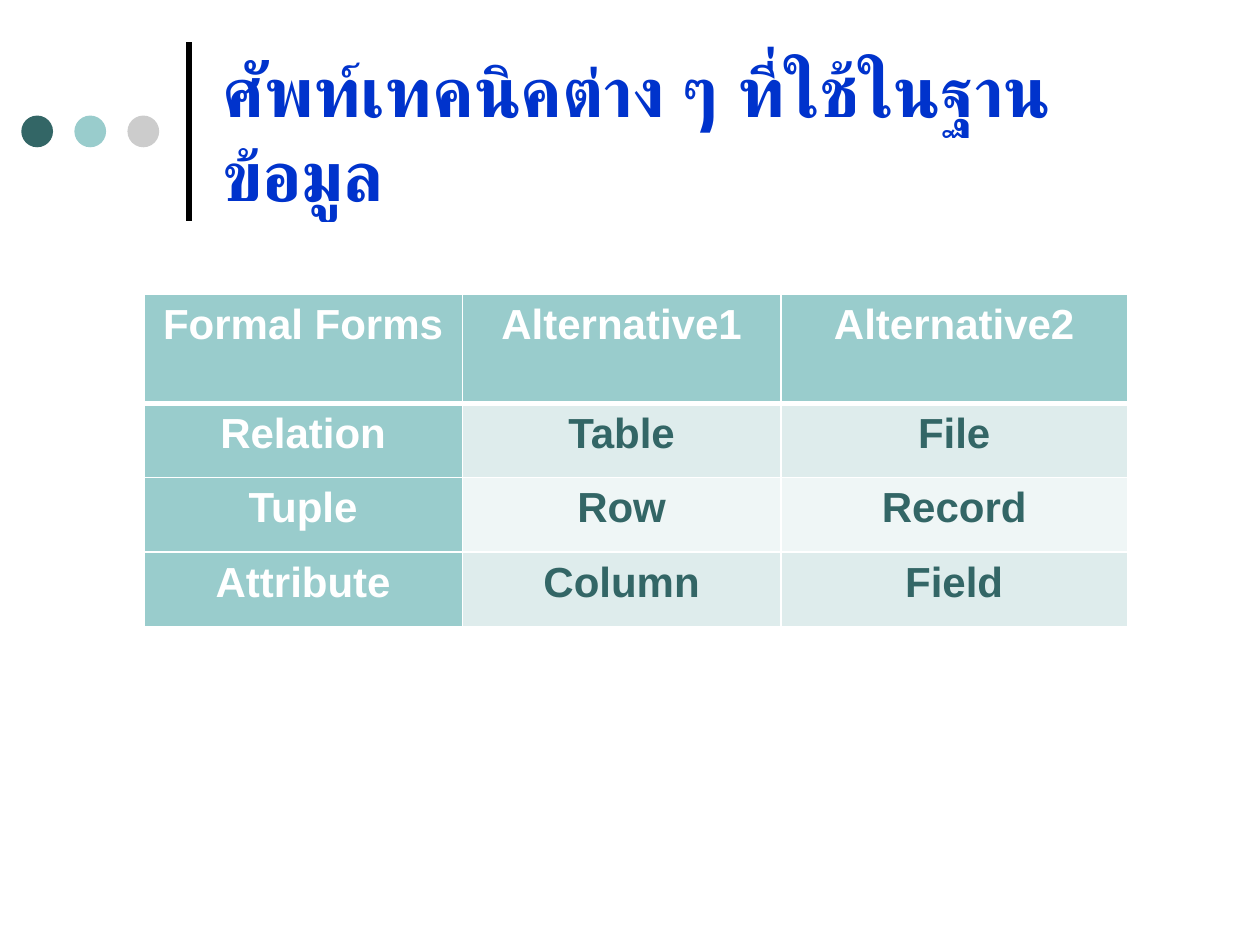
import lxml.etree
import pptx
import pptx.dml.color
import pptx.enum.lang
import pptx.enum.shapes
import pptx.enum.text
import pptx.oxml.ns
import pptx.util

Cm, Pt = pptx.util.Cm, pptx.util.Pt
qualified = pptx.oxml.ns.qn

TITLE = "ศัพท์เทคนิคต่าง ๆ ที่ใช้ในฐานข้อมูล"
TERMS = [
    ("Formal Forms", "Alternative1", "Alternative2"),
    ("Relation", "Table", "File"),
    ("Tuple", "Row", "Record"),
    ("Attribute", "Column", "Field"),
]
COLUMN_WIDTHS = (6.42, 6.42, 6.99)
ROW_HEIGHTS = (2.2, 1.5, 1.5, 1.5)

THEME = {
    "font": "Arial",
    "title_size": 40,
    "table_size": 24,
    "title": "0033CC",
    "rule": "000000",
    "dots": ("336666", "99CCCC", "CCCCCC"),
    "heading_fill": "99CCCC",
    "heading_text": "FFFFFF",
    "body_text": "336666",
    "bands": ("DEECEC", "EFF6F6"),
    "border": "FFFFFF",
}


def color(value):
    return pptx.dml.color.RGBColor.from_string(value)


def set_values(target, values):
    for name, value in values.items():
        setattr(target, name, value)


def paint(fill, value):
    fill.solid()
    fill.fore_color.rgb = color(value)


def write(paragraph, text, size, text_color):
    run = paragraph.add_run()
    run.text = text
    set_values(run.font, {"name": THEME["font"], "size": Pt(size), "bold": True})
    run.font.color.rgb = color(text_color)
    return run


def add_dots(slide):
    diameter, step = 0.64, 1.07
    for index, dot_color in enumerate(THEME["dots"]):
        dot = slide.shapes.add_shape(
            pptx.enum.shapes.MSO_SHAPE.OVAL,
            Cm(0.43 + index * step), Cm(2.33), Cm(diameter), Cm(diameter))
        dot.shadow.inherit = False
        paint(dot.fill, dot_color)
        dot.line.fill.background()


def add_rule(slide):
    rule = slide.shapes.add_connector(
        pptx.enum.shapes.MSO_CONNECTOR.STRAIGHT, Cm(3.81), Cm(4.45), Cm(3.81), Cm(0.84))
    rule.line.width = Pt(3)
    rule.line.color.rgb = color(THEME["rule"])
    properties = rule._element.spPr
    lxml.etree.SubElement(properties, qualified("a:effectLst"))


def add_title(slide):
    box = slide.shapes.add_textbox(Cm(4.24), Cm(0.53), Cm(19.48), Cm(4.24))
    set_values(box.text_frame, {
        "word_wrap": True,
        "vertical_anchor": pptx.enum.text.MSO_ANCHOR.MIDDLE,
    })
    run = write(box.text_frame.paragraphs[0], TITLE, THEME["title_size"], THEME["title"])
    run.font.language_id = pptx.enum.lang.MSO_LANGUAGE_ID.THAI
    # Thai takes its typeface from the complex-script slot.
    lxml.etree.SubElement(run.font._element, qualified("a:cs"), typeface=THEME["font"])


def set_borders(cell, widths):
    """Put left, right, top and bottom lines before the fill, as the schema asks."""
    properties = cell._tc.get_or_add_tcPr()
    for index, (side, width) in enumerate(widths.items()):
        line = lxml.etree.Element(qualified("a:ln" + side), w=str(Pt(width)))
        fill = lxml.etree.SubElement(line, qualified("a:solidFill"))
        lxml.etree.SubElement(fill, qualified("a:srgbClr"), val=THEME["border"])
        properties.insert(index, line)


def add_terms_table(slide):
    table = slide.shapes.add_table(
        len(TERMS), len(COLUMN_WIDTHS), Cm(2.9), Cm(5.93),
        Cm(sum(COLUMN_WIDTHS)), Cm(sum(ROW_HEIGHTS))).table
    table.first_col = True
    for column, width in zip(table.columns, COLUMN_WIDTHS):
        column.width = Cm(width)
    for row, height in zip(table.rows, ROW_HEIGHTS):
        row.height = Cm(height)

    for row_index, words in enumerate(TERMS):
        for column_index, word in enumerate(words):
            cell = table.cell(row_index, column_index)
            heading = row_index == 0 or column_index == 0
            band = THEME["bands"][(row_index - 1) % 2]
            set_values(cell, {
                "margin_left": Cm(0.2), "margin_right": Cm(0.2),
                "margin_top": 0, "margin_bottom": 0,
            })
            paint(cell.fill, THEME["heading_fill"] if heading else band)
            set_borders(cell, {
                "L": 1, "R": 1,
                "T": 3 if row_index == 1 else 1,
                "B": 3 if row_index == 0 else 1,
            })
            paragraph = cell.text_frame.paragraphs[0]
            set_values(paragraph, {
                "alignment": pptx.enum.text.PP_ALIGN.CENTER,
                "line_spacing": 1.15,
            })
            write(paragraph, word, THEME["table_size"],
                  THEME["heading_text"] if heading else THEME["body_text"])


def main():
    presentation = pptx.Presentation()
    set_values(presentation, {"slide_width": Cm(25.4), "slide_height": Cm(19.05)})
    slide = presentation.slides.add_slide(presentation.slide_layouts[6])
    add_rule(slide)
    add_dots(slide)
    add_title(slide)
    add_terms_table(slide)
    presentation.save("out.pptx")


if __name__ == "__main__":
    main()
